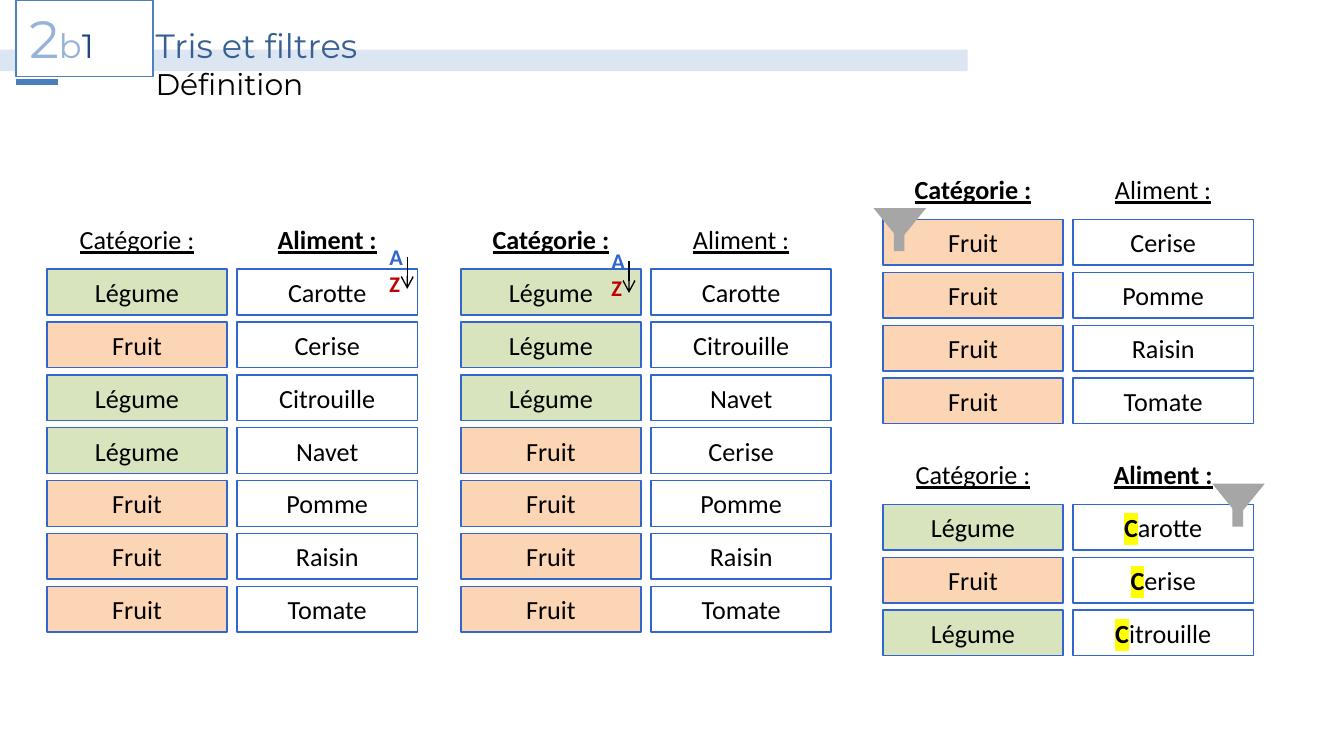
from lxml import etree
from pptx import Presentation
from pptx import util as u
from pptx.dml.color import RGBColor
from pptx.enum import shapes, text
from pptx.oxml import ns

COLORS = {
    "bar": "DCE6F2", "title": "376092", "badge": "4F81BD", "accent": "4B7EBC",
    "number": "95B3D7", "index": "1F497D", "border": "3366CC", "black": "000000",
    "white": "FFFFFF", "red": "C00000", "funnel": "A6A6A6", "mark": "FFFF00",
    "Légume": "D7E4BD", "Fruit": "FCD5B5",
}
HEADERS = ("Catégorie :", "Aliment :")
KIND = {
    "Carotte": "Légume", "Cerise": "Fruit", "Citrouille": "Légume", "Navet": "Légume",
    "Pomme": "Fruit", "Raisin": "Fruit", "Tomate": "Fruit",
}
FOODS = list(KIND)

# left, top, foods, bold column, first letter marked
LISTS = [
    (0.35, 1.61, FOODS, 1, False),
    (3.43, 1.61, sorted(FOODS, key=lambda food: KIND[food] == "Fruit"), 0, False),
    (6.57, 1.24, [food for food in FOODS if KIND[food] == "Fruit"], 0, False),
    (6.57, 3.36, [food for food in FOODS if food.startswith("C")], 1, True),
]
SORT_ICONS = [(2.8, 1.76), (4.45, 1.79)]
FUNNELS = [(6.5, 1.55), (9.02, 3.6)]

PAGE_W = 10
PAGE_H = PAGE_W * 9 / 16
CELL_W, CELL_H = 1.34, 0.34
COLUMN_STEP = 2.83 / 2
ROW_STEP = 2.36 / 6


def add_paragraph_spans(para, spans):
    """Fill para from (text, size, font, colour, bold, underline, marked) tuples."""
    for content, size, font, color, bold, underline, marked in spans:
        span = para.add_run()
        span.text = content
        span.font.size = u.Pt(size)
        span.font.name = font
        span.font.bold = bold
        span.font.underline = underline
        span.font.color.rgb = RGBColor.from_string(COLORS[color])
        if marked:
            mark = etree.Element(ns.qn("a:highlight"))
            etree.SubElement(mark, ns.qn("a:srgbClr"), val=COLORS["mark"])
            span.font.fill._xPr.find(ns.qn("a:solidFill")).addnext(mark)


def styled(content, size=14, font="Calibri", color="black", bold=False,
           underline=False, marked=False):
    return content, size, font, color, bold, underline, marked


def write(shape, lines, align=text.PP_ALIGN.LEFT, anchor=text.MSO_ANCHOR.TOP):
    frame = shape.text_frame
    frame.word_wrap = True
    frame.vertical_anchor = anchor
    for number, spans in enumerate(lines):
        para = frame.add_paragraph() if number else frame.paragraphs[0]
        para.alignment = align
        add_paragraph_spans(para, spans)


def write_cell(shape, spans):
    write(shape, [spans], text.PP_ALIGN.CENTER, text.MSO_ANCHOR.MIDDLE)


def add_text_box(parent, area):
    return parent.add_textbox(*map(u.Inches, area))


def add_block(parent, area, fill=None, line=None, kind=shapes.MSO_SHAPE.RECTANGLE):
    block = parent.add_shape(kind, *map(u.Inches, area))
    block.shadow.inherit = False
    if fill:
        block.fill.solid()
        block.fill.fore_color.rgb = RGBColor.from_string(COLORS[fill])
    else:
        block.fill.background()
    if line:
        block.line.color.rgb = RGBColor.from_string(COLORS[line])
        block.line.width = u.Pt(0.75)
    else:
        block.line.fill.background()
    return block


def add_line(parent, ends, color, width, arrow=False):
    line = parent.add_connector(shapes.MSO_CONNECTOR.STRAIGHT, *map(u.Inches, ends))
    line.line.color.rgb = RGBColor.from_string(COLORS[color])
    line.line.width = u.Pt(width)
    properties = line._element.spPr
    if arrow:
        etree.SubElement(properties.find(ns.qn("a:ln")), ns.qn("a:tailEnd"), type="arrow")
    etree.SubElement(properties, ns.qn("a:effectLst"))


def add_heading(parent):
    add_block(parent, (0, 0.37, 7.2, 0.16), "bar")
    write(add_text_box(parent, (1.06, 0.14, 6.46, 0.67)), [
        [styled("Tris et filtres", 18, "Montserrat", "title")],
        [styled("Définition", 16, "Montserrat")],
    ])
    write(add_block(parent, (0.12, 0, 1.02, 0.57), "white", "badge"), [[
        styled("2", 28, "Montserrat", "number"),
        styled("b", 18, "Montserrat", "number"),
        styled("1", 18, "Montserrat", "index"),
    ]])
    add_line(parent, (0.43, 0.61, 0.12, 0.61), "accent", 3)


def add_list(parent, left, top, foods, bold_column, marked):
    def cell_area(column, row):
        return left + column * COLUMN_STEP, top + row * ROW_STEP, CELL_W, CELL_H

    for column, header in enumerate(HEADERS):
        box = add_text_box(parent, cell_area(column, 0))
        write_cell(box, [styled(header, bold=column == bold_column, underline=True)])
    for row, food in enumerate(foods, 1):
        kind = KIND[food]
        write_cell(add_block(parent, cell_area(0, row), kind, "border"), [styled(kind)])
        spans = [styled(food)]
        if marked:
            spans = [styled(food[0], bold=True, marked=True), styled(food[1:])]
        write_cell(add_block(parent, cell_area(1, row), line="border"), spans)


def add_sort_icon(parent, left, top):
    icon = parent.add_group_shape().shapes
    write(add_text_box(icon, (left, top, 0.47, 0.5)), [
        [styled("A", 12, color="border", bold=True)],
        [styled("Z", 12, color="red", bold=True)],
    ])
    x = left + 0.23
    add_line(icon, (x, top + 0.15, x, top + 0.39), "black", 0.75, arrow=True)


def add_funnel(parent, left, top):
    icon = parent.add_group_shape().shapes
    cone = add_block(icon, (left, top, 0.39, 0.24), "funnel",
                     kind=shapes.MSO_SHAPE.ISOSCELES_TRIANGLE)
    cone._element.spPr.xfrm.set("flipV", "1")
    add_block(icon, (left + 0.15, top + 0.16, 0.08, 0.16), "funnel")


def main():
    deck = Presentation()
    deck.slide_width, deck.slide_height = u.Inches(PAGE_W), u.Inches(PAGE_H)
    page = deck.slides.add_slide(deck.slide_layouts[6])
    add_heading(page.shapes)
    for food_list in LISTS:
        add_list(page.shapes, *food_list)
    for place in SORT_ICONS:
        add_sort_icon(page.shapes, *place)
    for place in FUNNELS:
        add_funnel(page.shapes, *place)
    deck.save("out.pptx")


if __name__ == "__main__":
    main()
